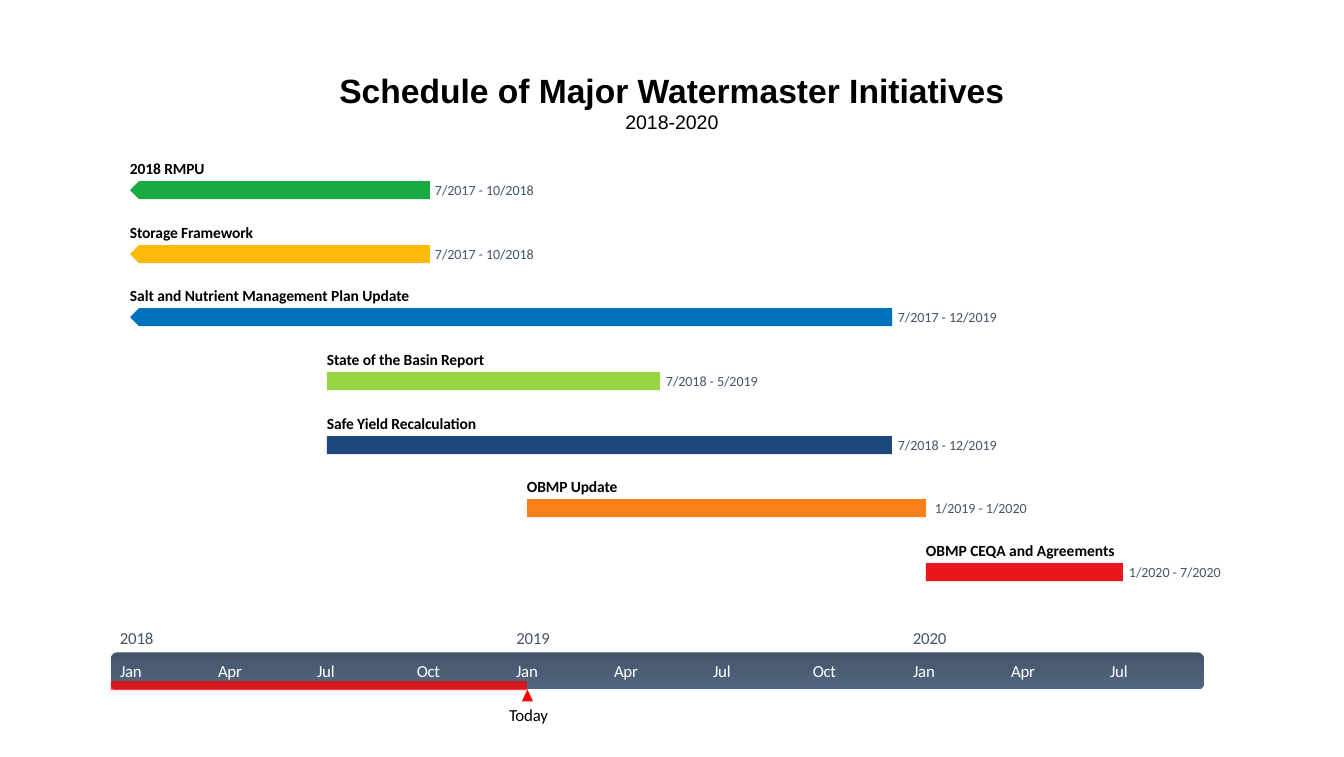
from lxml import etree
from pptx import Presentation
from pptx import util as u
from pptx.dml.color import RGBColor
from pptx.enum import shapes, text
from pptx.oxml.ns import qn

PX = 914400 / 134.4  # one px in EMU
KIND = shapes.MSO_SHAPE
THEME = {
    "ink": "000000", "slate": "44546A", "steel": "52667F",
    "white": "FFFFFF", "red": "FF0000",
    "head": "Arial", "body": "Calibri",
    "title": 18, "sub": 10.5, "name": 8.3, "date": 7.5, "axis": 9,
}

# name, its spacing, left, right, dates, colour, gap before dates, early start
TASKS = [
    ("2018 RMPU", -6, 130, 430, "7/2017 - 10/2018", "1AAA42", 5, True),
    ("Storage Framework", -6, 130, 430, "7/2017 - 10/2018", "FEBA0A", 5, True),
    ("Salt and Nutrient Management Plan Update", -4, 130, 892,
     "7/2017 - 12/2019", "0072BC", 6, True),
    ("State of the Basin Report", -6, 327, 660, "7/2018 - 5/2019", "96D642", 6, False),
    ("Safe Yield Recalculation", -6, 327, 892, "7/2018 - 12/2019", "1F497D", 6, False),
    ("OBMP Update", -6, 527, 926, "1/2019 - 1/2020", "F97F1A", 9, False),
    ("OBMP CEQA and Agreements", 0, 926, 1123, "1/2020 - 7/2020", "EA161E", 6, False),
]
ROW, PITCH = 181, 63.67
# quarter label: day of the year, width
MONTHS = {"Jan": (0, 30), "Apr": (90, 32), "Jul": (181, 23), "Oct": (273, 31)}
AXIS, YEAR = 120, 396.5


def box(*lens):
    return [round(n * PX) for n in lens]


def style(run, size, color="ink", face="body", bold=False, spc=-10):
    vals = {"size": u.Pt(size), "name": THEME[face], "bold": bold}
    for key, val in vals.items():
        setattr(run.font, key, val)
    run.font.color.rgb = RGBColor.from_string(THEME[color])
    if spc:
        run.font._element.set("spc", str(spc))


def frame(shape, wrap, anchor):
    vals = {"word_wrap": wrap, "vertical_anchor": anchor,
            "auto_size": text.MSO_AUTO_SIZE.NONE}
    for key, val in vals.items():
        setattr(shape.text_frame, key, val)
    return shape.text_frame


def label(slide, words, place, size, wrap=True, align=None, **look):
    shape = slide.shapes.add_textbox(*box(*place))
    body = frame(shape, wrap, text.MSO_ANCHOR.MIDDLE)
    for side in ("left", "top", "right", "bottom"):
        setattr(body, "margin_" + side, 0)
    para = body.paragraphs[0]
    para.alignment = align
    run = para.add_run()
    run.text = words
    style(run, THEME[size], **look)


def block(slide, kind, place, color):
    shape = slide.shapes.add_shape(kind, *box(*place))
    shape.shadow.inherit = False
    shape.line.fill.background()
    shape.fill.solid()
    shape.fill.fore_color.rgb = RGBColor.from_string(color)
    return shape


def title(slide):
    shape = slide.shapes.title
    for key, val in zip(("left", "top", "width", "height"), box(5, 63, 1334, 78)):
        setattr(shape, key, val)
    body = frame(shape, True, text.MSO_ANCHOR.TOP)
    lines = [("Schedule of Major Watermaster Initiatives", "title", True),
             ("2018-2020", "sub", False)]
    for i, (words, size, bold) in enumerate(lines):
        para = body.add_paragraph() if i else body.paragraphs[0]
        para.alignment = text.PP_ALIGN.CENTER
        run = para.add_run()
        run.text = words
        style(run, THEME[size], face="head", bold=bold, spc=0)


def task(slide, i, name, spc, left, right, dates, color, gap, early):
    top = round(ROW + i * PITCH)
    kind = KIND.PENTAGON if early else KIND.RECTANGLE
    bar = block(slide, kind, (left, top, right - left, 18), color)
    bar.rotation = 180 if early else 0
    label(slide, name, (left, top - 25, 374, 24), "name", bold=True, spc=spc)
    label(slide, dates, (right + gap, top - 3, 134, 23), "date",
          color="slate", spc=-6)


def axis(slide):
    # Band with a vertical gradient
    band = block(slide, KIND.ROUNDED_RECTANGLE, (111, 652, 1093, 37), THEME["slate"])
    band.fill.gradient()
    band.fill.gradient_angle = 270
    for stop, key in zip(band.fill.gradient_stops, ("slate", "steel")):
        stop.color.rgb = RGBColor.from_string(THEME[key])

    # Elapsed time and today's marker
    past = block(slide, KIND.ROUNDED_RECTANGLE, (111, 681, 416, 9), THEME["red"])
    past.adjustments[0] = 0
    tint = past.fill._xPr.find(qn("a:solidFill"))[0]
    etree.SubElement(tint, qn("a:alpha")).set("val", "75000")
    block(slide, KIND.ISOSCELES_TRIANGLE, (522, 689, 11, 12), THEME["red"])
    label(slide, "Today", (501, 701, 55, 27), "axis", wrap=False,
          align=text.PP_ALIGN.CENTER)

    # Years and quarters
    for i, year in enumerate(("2018", "2019", "2020")):
        start = AXIS + i * YEAR
        label(slide, year, (start, 624, 44, 27), "axis", wrap=False, color="slate")
        for month, (day, wide) in MONTHS.items():
            if (year, month) == ("2020", "Oct"):
                continue
            left = round(start + day * YEAR / 365)
            label(slide, month, (left, 657, wide, 26), "axis", wrap=False,
                  color="white", spc=-20 if month == "Oct" else -10)


def main():
    deck = Presentation()
    deck.slide_width, deck.slide_height = u.Inches(10), u.Inches(5.63)
    slide = deck.slides.add_slide(deck.slide_layouts[5])
    title(slide)
    for i, row in enumerate(TASKS):
        task(slide, i, *row)
    axis(slide)
    deck.save("out.pptx")


if __name__ == "__main__":
    main()
